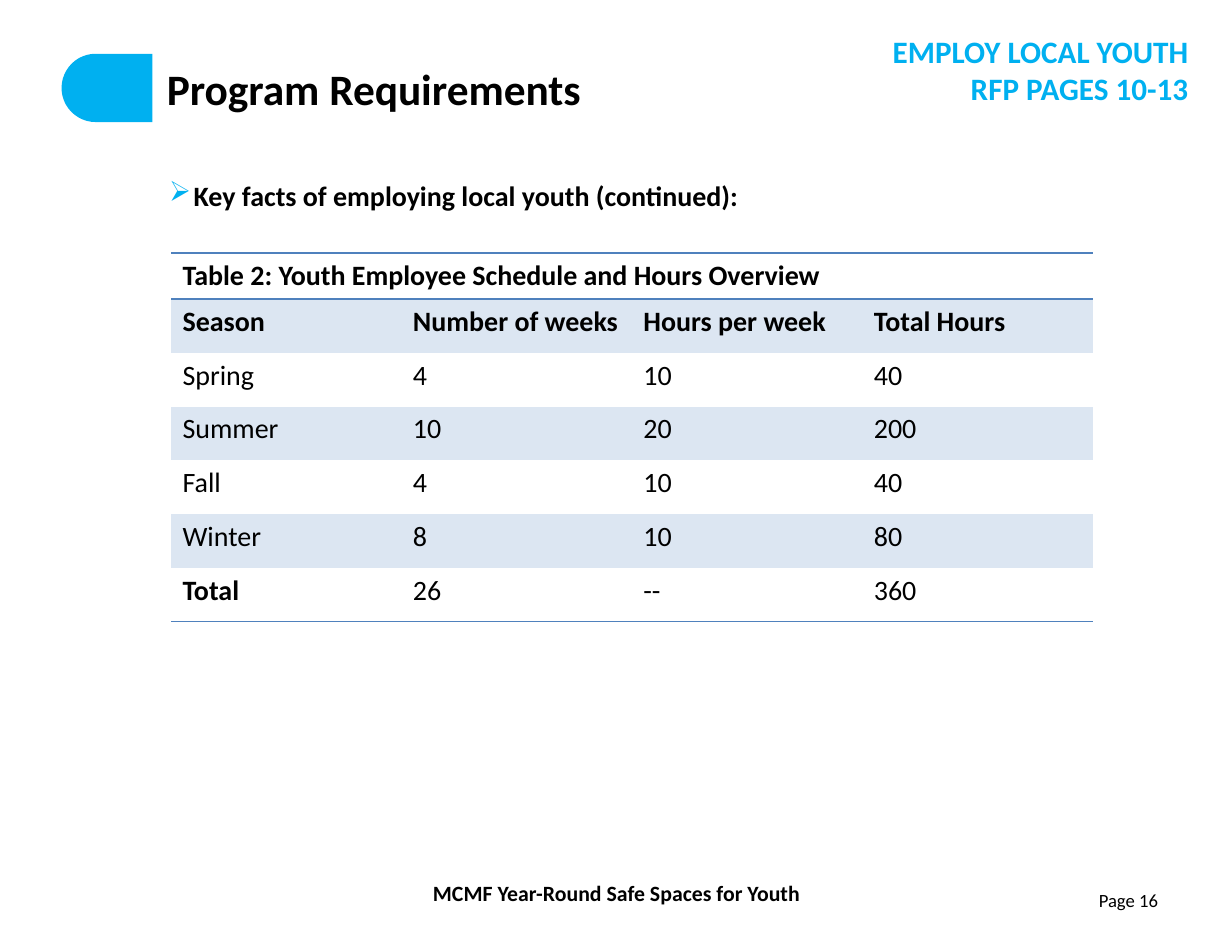
"""Build the Program Requirements slide with the youth employee schedule table."""
from dataclasses import dataclass

from lxml import etree
from pptx import Presentation
from pptx.dml.color import RGBColor
from pptx.enum.shapes import MSO_SHAPE
from pptx.enum.text import MSO_ANCHOR, PP_ALIGN
from pptx.oxml.ns import qn
from pptx.util import Inches, Pt

LEFT, CENTER, RIGHT = PP_ALIGN.LEFT, PP_ALIGN.CENTER, PP_ALIGN.RIGHT
TOP, MIDDLE = MSO_ANCHOR.TOP, MSO_ANCHOR.MIDDLE
ROUNDED, RECTANGLE = MSO_SHAPE.ROUNDED_RECTANGLE, MSO_SHAPE.RECTANGLE
NO_GRID_STYLE = "{2D5ABB26-0587-4C30-8999-92F81FD0307C}"


@dataclass(frozen=True)
class Theme:
    font: str = "Calibri"
    black: str = "000000"
    white: str = "FFFFFF"
    accent: str = "00B0F0"
    rule: str = "4F81BD"
    band: str = "DCE6F2"
    title: float = 27.9
    banner: float = 20
    body: float = 18
    footer: float = 14
    page: float = 12


THEME = Theme()


def write(frame, lines, size, bold=True, color=THEME.black, align=LEFT):
    for index, line in enumerate(lines):
        para = frame.paragraphs[0] if index == 0 else frame.add_paragraph()
        para.alignment = align
        span = para.add_run()
        span.text = line
        for name, value in {"name": THEME.font, "size": Pt(size), "bold": bold}.items():
            setattr(span.font, name, value)
        span.font.color.rgb = RGBColor.from_string(color)


def add_rule(cell, side):
    properties = cell._tc.get_or_add_tcPr()
    line = etree.Element(qn(f"a:{side}"), w=str(Pt(1)))
    fill = etree.SubElement(line, qn("a:solidFill"))
    etree.SubElement(fill, qn("a:srgbClr"), val=THEME.rule)
    properties.insert(0, line)


deck = Presentation()
deck.slide_width, deck.slide_height = Inches(11), Inches(8.5)
page = deck.slides.add_slide(deck.slide_layouts[6])

TAB_SHAPES = [
    (ROUNDED, (0.55, 0.48, 8.44, 0.61), THEME.accent),
    (RECTANGLE, (1.36, 0.41, 7.67, 0.86), THEME.white),
]
for kind, place, color in TAB_SHAPES:
    shape = page.shapes.add_shape(kind, *map(Inches, place))
    shape.shadow.inherit = False
    shape.fill.solid()
    shape.fill.fore_color.rgb = RGBColor.from_string(color)
    shape.line.fill.background()
    if kind == ROUNDED:
        shape.adjustments[0] = 0.5

TEXTS = [
    ((2.66, 7.81, 5.69, 0.34), (0.1, 0.05), TOP,
     ["MCMF Year-Round Safe Spaces for Youth"],
     {"size": THEME.footer, "align": CENTER}),
    ((1.38, 0.51, 9.07, 0.55), (0.11, 0.06), MIDDLE,
     ["Program Requirements"], {"size": THEME.title}),
    ((7.88, 7.88, 2.57, 0.45), (0.11, 0.06), TOP,
     ["Page 16"], {"size": THEME.page, "bold": False, "align": RIGHT}),
    ((7.16, 0.24, 3.55, 0.77), (0.1, 0.05), TOP,
     ["EMPLOY LOCAL YOUTH", "RFP PAGES 10-13"],
     {"size": THEME.banner, "color": THEME.accent, "align": RIGHT}),
    ((1.37, 1.53, 8.47, 0.45), (0.11, 0.06), TOP,
     ["Key facts of employing local youth (continued):"], {"size": THEME.body}),
]
for place, (side, edge), anchor, lines, style in TEXTS:
    box = page.shapes.add_textbox(*map(Inches, place))
    frame = box.text_frame
    settings = {
        "word_wrap": True, "vertical_anchor": anchor,
        "margin_left": Inches(side), "margin_right": Inches(side),
        "margin_top": Inches(edge), "margin_bottom": Inches(edge),
    }
    for name, value in settings.items():
        setattr(frame, name, value)
    write(frame, lines, **style)

bullet = frame.paragraphs[0]._p.get_or_add_pPr()
bullet.set("marL", str(Inches(0.25)))
bullet.set("indent", str(Inches(-0.22)))
bullet_color = etree.SubElement(bullet, qn("a:buClr"))
etree.SubElement(bullet_color, qn("a:srgbClr"), val=THEME.accent)
etree.SubElement(bullet, qn("a:buChar"), char="➢")

SCHEDULE = [
    ["Table 2: Youth Employee Schedule and Hours Overview", "", "", ""],
    ["Season", "Number of weeks", "Hours per week", "Total Hours"],
    ["Spring", "4", "10", "40"],
    ["Summer", "10", "20", "200"],
    ["Fall", "4", "10", "40"],
    ["Winter", "8", "10", "80"],
    ["Total", "26", "--", "360"],
]
LAST = len(SCHEDULE) - 1
table = page.shapes.add_table(
    len(SCHEDULE), 4, Inches(1.53), Inches(2.26), Inches(8.23), Inches(3.3)
).table
table.first_row = table.horz_banding = False
table._tbl.tblPr.find(qn("a:tableStyleId")).text = NO_GRID_STYLE
for row_index, values in enumerate(SCHEDULE):
    table.rows[row_index].height = Inches(0.48 if row_index else 0.41)
    for column_index, value in enumerate(values):
        cell = table.cell(row_index, column_index)
        if row_index % 2:
            cell.fill.solid()
            cell.fill.fore_color.rgb = RGBColor.from_string(THEME.band)
        else:
            cell.fill.background()
        if row_index in (0, LAST):
            add_rule(cell, "lnB")
        if row_index == 0:
            add_rule(cell, "lnT")
        if value:
            bold = row_index < 2 or value == "Total"
            write(cell.text_frame, [value], THEME.body, bold)
table.cell(0, 0).merge(table.cell(0, 3))

deck.save("out.pptx")
